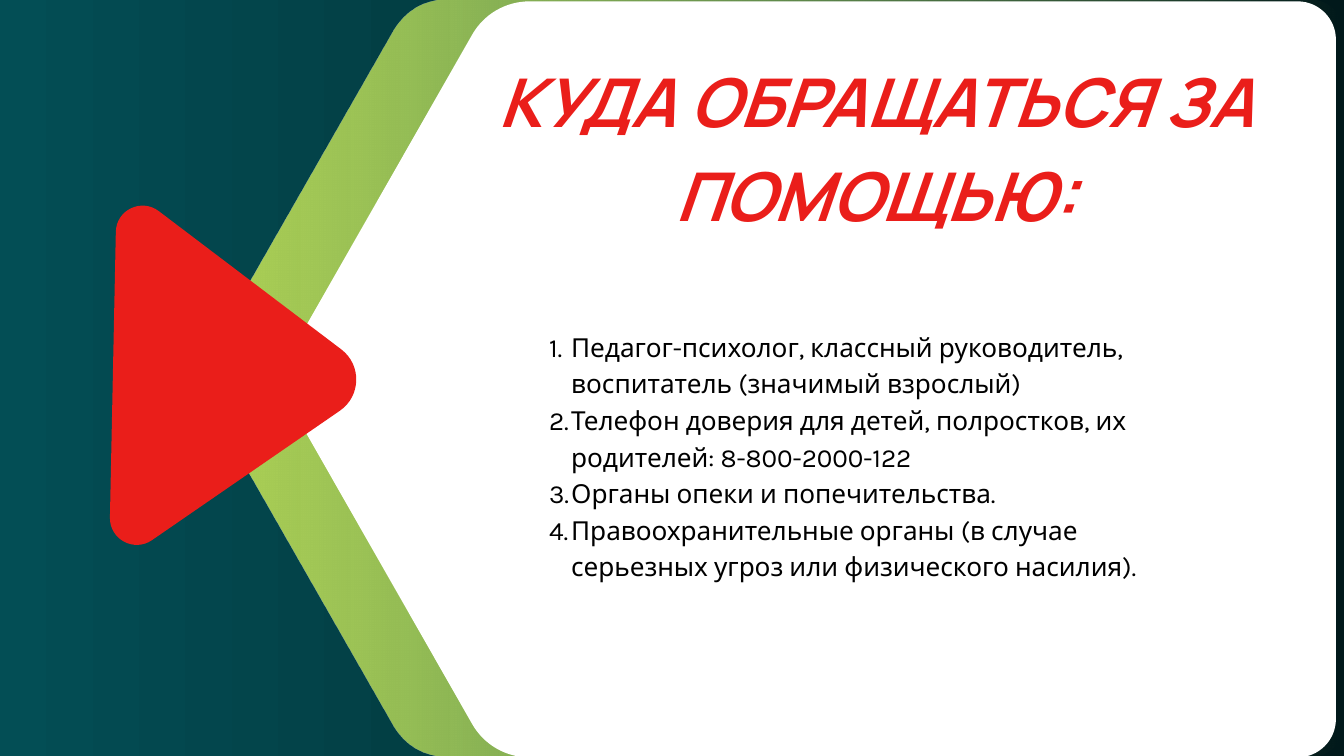
from math import atan2, hypot, tan

from lxml.etree import SubElement
from pptx import Presentation
from pptx.dml.color import RGBColor
from pptx.enum.text import MSO_ANCHOR, MSO_AUTO_SIZE, PP_ALIGN
from pptx.oxml.ns import qn
from pptx.util import Inches, Pt

RED = "EA1E1A"
TITLE = "КУДА ОБРАЩАТЬСЯ ЗА ПОМОЩЬЮ:"
HELP = [
    "Педагог-психолог, классный руководитель, воспитатель (значимый взрослый)",
    "Телефон доверия для детей, полростков, их родителей: 8-800-2000-122",
    "Органы опеки и попечительства.",
    "Правоохранительные органы (в случае серьезных угроз или физического насилия).",
]


def color(code):
    return RGBColor.from_string(code)


def fade(fill, *codes):
    """Fill with a left-to-right gradient."""
    fill.gradient()
    fill.gradient_angle = 0
    for stop, code in zip(fill.gradient_stops, codes):
        stop.color.rgb = color(code)


def toward(start, end, share):
    return tuple(a + (b - a) * share for a, b in zip(start, end))


def arc(prev, corner, after, cut):
    """Four Bezier points of the arc that rounds a corner, cut inches from it."""
    (ax, ay), (bx, by) = [
        (end[0] - start[0], end[1] - start[1])
        for start, end in ((prev, corner), (corner, after))
    ]
    turn = abs(atan2(ax * by - ay * bx, ax * bx + ay * by))
    pull = 4 / 3 * tan(turn / 4) / tan(turn / 2)
    first = toward(corner, prev, cut / hypot(ax, ay))
    last = toward(corner, after, cut / hypot(bx, by))
    return [first, toward(first, corner, pull), toward(last, corner, pull), last]


def bend(shape):
    """Turn the last three of every four outline points into one curve."""
    track = shape.element.find(".//" + qn("a:path"))
    nodes = list(track)[:-1]
    for i in range(0, len(nodes), 4):
        lines = nodes[i + 1:i + 4]
        curve = track.makeelement(qn("a:cubicBezTo"))
        lines[0].addprevious(curve)
        for line in lines:
            curve.append(line[0])
            track.remove(line)


def add_round(slide, corners, cut):
    """Add a polygon whose corners are all rounded alike."""
    points = []
    for i, corner in enumerate(corners):
        after = corners[(i + 1) % len(corners)]
        points += arc(corners[i - 1], corner, after, cut)
    points = [(Inches(x), Inches(y)) for x, y in points]
    pen = slide.shapes.build_freeform(*points[0])
    pen.add_line_segments(points[1:], close=True)
    shape = pen.convert_to_shape()
    bend(shape)
    shape.shadow.inherit = False
    shape.line.fill.background()
    return shape


def add_arrow(slide, tip, left, right, top, cut):
    """Add a panel that is pointed on its left side."""
    base = top + 11.25
    corners = [(tip, (top + base) / 2), (left, top), (right, top),
               (right, base), (left, base)]
    return add_round(slide, corners, cut)


def set_text(slide, holder, box, lines, style, layout):
    """Place a placeholder in front of the shapes and fill it with paragraphs."""
    slide.shapes.element.append(holder.element)
    holder.left, holder.top, holder.width, holder.height = map(Inches, box)
    frame = holder.text_frame
    frame.text = "\n".join(lines)
    setup = {"word_wrap": True, "auto_size": MSO_AUTO_SIZE.NONE,
             "vertical_anchor": MSO_ANCHOR.TOP, "margin_left": 0,
             "margin_top": 0, "margin_right": 0, "margin_bottom": 0}
    for name, value in setup.items():
        setattr(frame, name, value)
    for para in frame.paragraphs:
        for name, value in layout.items():
            setattr(para, name, value)
        font = para.runs[0].font
        for name, value in style.items():
            if name == "color":
                font.color.rgb = color(value)
            else:
                setattr(font, name, value)


def number(holder):
    for para in holder.text_frame.paragraphs:
        props = para._p.get_or_add_pPr()
        props.set("marL", str(Inches(0.66)))
        props.set("indent", str(Inches(-0.33)))
        SubElement(props, qn("a:buAutoNum"), type="arabicPeriod")


def main():
    deck = Presentation()
    deck.slide_width, deck.slide_height = Inches(20), Inches(11.25)
    slide = deck.slides.add_slide(deck.slide_layouts[1])
    fade(slide.background.fill, "034E55", "01191B")

    green = add_arrow(slide, 2.9, 6.12, 20, 0, 0.53)
    fade(green.fill, "AFD255", "D8FF72")
    clear = green.element.findall(".//" + qn("a:srgbClr"))[-1]
    SubElement(clear, qn("a:alpha"), val="0")

    panel = add_arrow(slide, 4.1, 7.31, 19.88, 0.02, 0.57)
    play = add_round(slide, [(1.62, 8.48), (1.74, 2.67), (5.7, 5.67)], 0.78)
    for shape, code in ((panel, "FFFFFF"), (play, RED)):
        shape.fill.solid()
        shape.fill.fore_color.rgb = color(code)

    body = slide.placeholders[1]
    set_text(slide, body, (7.84, 4.85, 10.12, 3.84), HELP,
             {"name": "Karla", "size": Pt(28), "color": "000000"},
             {"alignment": PP_ALIGN.LEFT, "line_spacing": Pt(39.2),
              "space_before": Pt(0)})
    number(body)
    set_text(slide, slide.shapes.title, (6.82, 0.7, 12.43, 2.81), [TITLE],
             {"name": "Manrope", "size": Pt(72), "color": RED,
              "bold": True, "italic": True},
             {"alignment": PP_ALIGN.CENTER, "line_spacing": Pt(100.8),
              "space_before": Pt(0)})
    deck.save("out.pptx")


if __name__ == "__main__":
    main()
